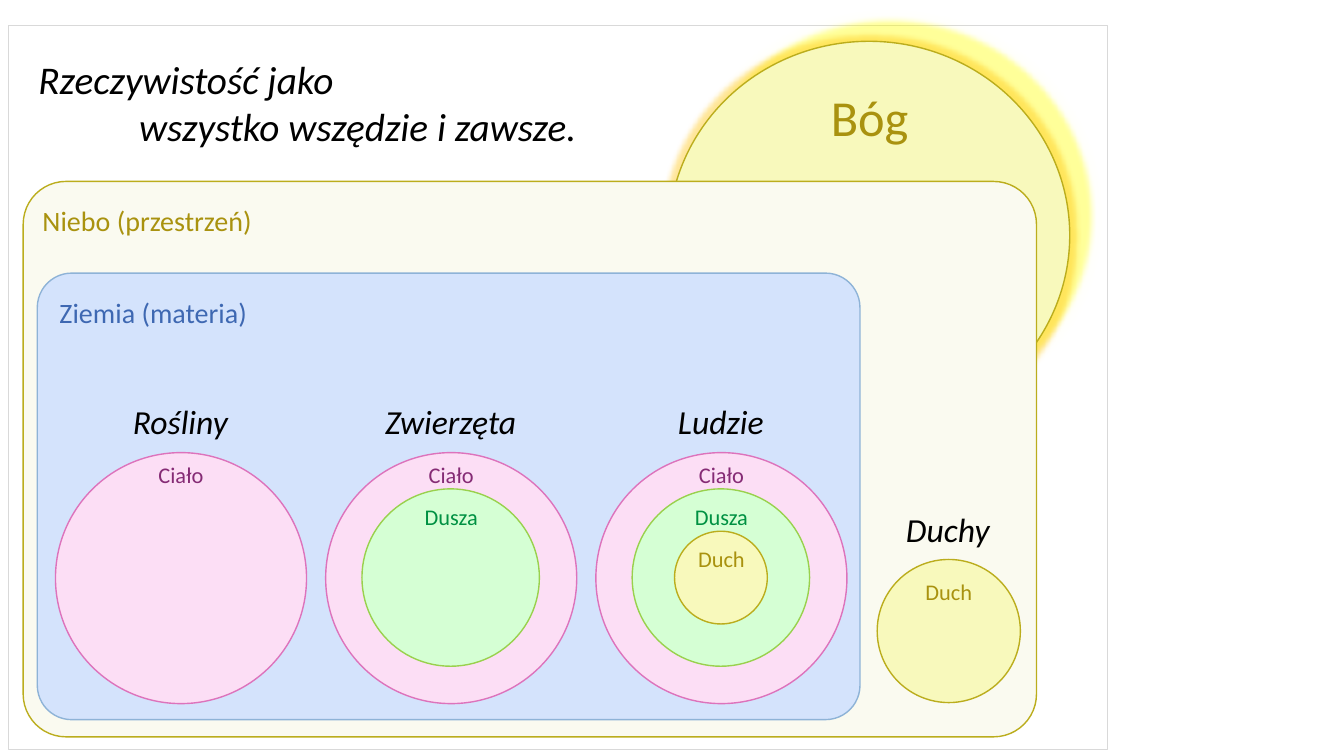
"""Draws nested realms of reality as one slide of boxes and circles."""
from dataclasses import dataclass
from typing import Any, NamedTuple

from lxml import etree
from pptx import Presentation
from pptx import util as u
from pptx.dml.color import RGBColor
from pptx.enum import shapes, text
from pptx.oxml import ns

PX = 9144


@dataclass(frozen=True)
class Theme:
    font: str = "Calibri"
    black: str = "000000"
    white: str = "FFFFFF"
    frame: str = "D9D9D9"
    gold: str = "BBAD1D"
    ochre: str = "A9920F"
    lemon: str = "F8F9BC"
    cream: str = "FAFAF0"
    sky: str = "D4E3FC"
    steel: str = "8EB3D7"
    blue: str = "3E68B2"
    pink: str = "FCDEF5"
    rose: str = "DD73BC"
    plum: str = "852B75"
    mint: str = "D5FFD4"
    lime: str = "99D14D"
    green: str = "009142"
    shade: str = "FFFF00"
    glow: str = "FFC000"
    huge: int = 36
    head: int = 28
    name: int = 24
    realm: int = 20
    label: int = 16


T = Theme()
OVAL = shapes.MSO_SHAPE.OVAL
RECT = shapes.MSO_SHAPE.RECTANGLE
ROUND = shapes.MSO_SHAPE.ROUNDED_RECTANGLE
LEFT = text.PP_ALIGN.LEFT
MID = text.PP_ALIGN.CENTER


class Box(NamedTuple):
    x: int
    y: int
    w: int
    h: int

    def emu(self) -> list[int]:
        """Gives the box in EMU."""
        return [v * PX for v in self]


class Layer(NamedTuple):
    label: str
    size: int
    fill: str
    line: str
    ink: str


class Being(NamedTuple):
    name: str
    depth: int


class Realm(NamedTuple):
    label: str
    box: Box
    tag: Box
    fill: str
    line: str
    ink: str


LAYERS = [
    Layer("Ciało", 249, T.pink, T.rose, T.plum),
    Layer("Dusza", 176, T.mint, T.lime, T.green),
    Layer("Duch", 92, T.lemon, T.gold, T.ochre),
]
BEINGS = [Being("Rośliny", 1), Being("Zwierzęta", 2), Being("Ludzie", 3)]
REALMS = [
    Realm("Niebo (przestrzeń)", Box(23, 180, 1005, 551), Box(23, 198, 246, 42),
          T.cream, T.gold, T.ochre),
    Realm("Ziemia (materia)", Box(37, 271, 816, 443), Box(29, 289, 246, 42),
          T.sky, T.steel, T.blue),
]
FIRST, PITCH, CORE = 179, 268, 573
TAG_TOP, TAG_STEP = 453, 42


def draw(home: Any, kind: Any, box: Box, fill: str, line: str, width: float = 1) -> Any:
    """Adds a filled and outlined shape."""
    shape = home.add_shape(kind, *box.emu())
    shape.shadow.inherit = False
    shape.fill.solid()
    shape.fill.fore_color.rgb = RGBColor.from_string(fill)
    shape.line.color.rgb = RGBColor.from_string(line)
    shape.line.width = u.Pt(width)
    if kind == ROUND:
        shape.adjustments[0] = 0.077
    return shape


def write(frame: Any, words: str, *, size: int, ink: str = T.black,
          slant: bool = False, align: Any = MID) -> None:
    """Fills a text frame with formatted text."""
    frame.text = words
    frame.word_wrap = True
    frame.auto_size = text.MSO_AUTO_SIZE.NONE
    frame.vertical_anchor = text.MSO_ANCHOR.TOP
    frame.margin_left = frame.margin_right = 4 * PX
    frame.margin_top = frame.margin_bottom = 4 * PX
    for para in frame.paragraphs:
        para.alignment = align
        para.line_spacing = 1.0
        para.space_before = u.Pt(0)
        for run in para.runs:
            font = run.font
            font.name, font.size, font.italic = T.font, u.Pt(size), slant
            font.color.rgb = RGBColor.from_string(ink)


def note(home: Any, box: Box, words: str, **style: Any) -> None:
    """Adds a text box."""
    write(home.add_textbox(*box.emu()).text_frame, words, **style)


def halo(shape: Any) -> None:
    """Gives a shape a glow and a cast shadow."""
    root = shape._element.spPr.find(ns.qn("a:effectLst"))
    cast = {"blurRad": u.Pt(4), "dist": u.Pt(20), "dir": 315 * 60000,
            "algn": "ctr", "rotWithShape": 0}
    for tag, ink, alpha, attrs in (
        ("a:glow", T.glow, 40, {"rad": u.Pt(8)}),
        ("a:outerShdw", T.shade, 40, cast),
    ):
        node = etree.SubElement(root, ns.qn(tag), {k: str(int(v) if k != "algn" else v)
                                                  for k, v in attrs.items()})
        tint = etree.SubElement(node, ns.qn("a:srgbClr"), val=ink)
        etree.SubElement(tint, ns.qn("a:alpha"), val=str(alpha * 1000))


def disc(home: Any, layer: Layer, x: int, y: int, size: int, tag: Box) -> None:
    """Adds a labelled circle around a centre."""
    draw(home, OVAL, Box(x - size // 2, y - size // 2, size, size), layer.fill, layer.line)
    note(home, tag, layer.label, size=T.label, ink=layer.ink)


def being(home: Any, item: Being, x: int) -> None:
    """Adds the nested circles of one being."""
    group = home.add_group_shape().shapes
    for i, layer in enumerate(LAYERS[:item.depth]):
        tag = Box(x - 32, TAG_TOP + i * TAG_STEP, 65, 35)
        disc(group, layer, x, CORE, layer.size, tag)


def title(slide: Any) -> None:
    """Places the title in front with its second line indented."""
    head = slide.shapes.title
    head.left, head.top, head.width, head.height = Box(34, 51, 756, 102).emu()
    write(head.text_frame, "Rzeczywistość jako\nwszystko wszędzie i zawsze.",
          size=T.head, slant=True, align=LEFT)
    last = head.text_frame.paragraphs[1]._p.get_or_add_pPr()
    last.set("marL", str(100 * PX))
    last.set("indent", "0")
    slide.shapes._spTree.append(head._element)


def main() -> None:
    """Builds and saves the slide."""
    deck = Presentation()
    deck.slide_width, deck.slide_height = 1333 * PX, 750 * PX
    slide = deck.slides.add_slide(deck.slide_layouts[5])
    home = slide.shapes
    draw(home, RECT, Box(8, 25, 1090, 718), T.white, T.frame, 0.25)
    halo(draw(home, OVAL, Box(663, 41, 398, 385), T.lemon, T.gold))
    note(home, Box(722, 81, 281, 88), "Bóg", size=T.huge, ink=T.ochre)
    for realm in REALMS:
        draw(home, ROUND, realm.box, realm.fill, realm.line)
        note(home, realm.tag, realm.label, size=T.realm, ink=realm.ink)
    for i, item in enumerate(BEINGS):
        x = FIRST + i * PITCH
        being(home, item, x)
        note(home, Box(x - 123, 394, 246, 48), item.name, size=T.name, slant=True)
    group = home.add_group_shape().shapes
    disc(group, LAYERS[2], 941, 626, 142, Box(891, 570, 100, 54))
    note(home, Box(817, 501, 246, 48), "Duchy", size=T.name, slant=True)
    title(slide)
    deck.save("out.pptx")


if __name__ == "__main__":
    main()
